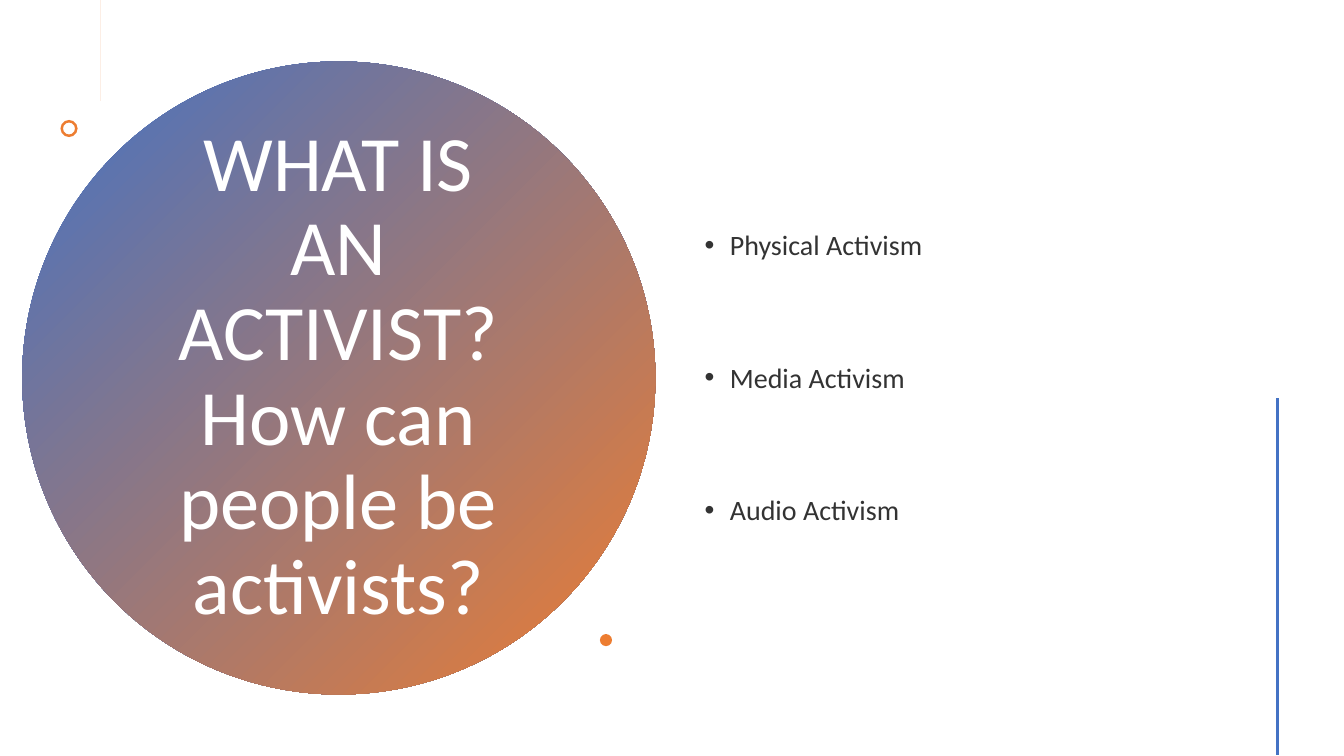
from dataclasses import dataclass
from math import cos, pi, sin

from lxml.etree import SubElement
from pptx import Presentation
from pptx.dml.color import RGBColor
from pptx.enum.shapes import MSO_CONNECTOR, MSO_SHAPE
from pptx.enum.text import MSO_ANCHOR, MSO_AUTO_SIZE, PP_ALIGN
from pptx.oxml.ns import qn
from pptx.util import Inches, Pt


@dataclass(frozen=True)
class Theme:
    font: str = "Calibri"
    title_size: int = 56
    body_size: int = 20
    blue: RGBColor = RGBColor(0x44, 0x72, 0xC4)
    orange: RGBColor = RGBColor(0xED, 0x7D, 0x31)
    white: RGBColor = RGBColor(0xFF, 0xFF, 0xFF)
    ink: RGBColor = RGBColor(0x33, 0x33, 0x33)


THEME = Theme()


def write(p, text, *, size, color, align=PP_ALIGN.LEFT, before=0):
    p.alignment = align
    p.line_spacing = 0.9
    p.space_before = Pt(before)
    for i, line in enumerate(text.split("\n")):
        if i:
            p.add_line_break()
        r = p.add_run()
        r.text = line
        r.font.name = THEME.font
        r.font.size = Pt(size)
        r.font.color.rgb = color


def prepare(tf, inset):
    tf.word_wrap = True
    tf.auto_size = MSO_AUTO_SIZE.NONE
    tf.vertical_anchor = MSO_ANCHOR.MIDDLE
    tf.margin_left = tf.margin_right = Inches(inset)


def add_bullet(p):
    pPr = p._p.get_or_add_pPr()
    pPr.set("marL", str(Inches(0.25)))
    pPr.set("indent", str(-Inches(0.25)))
    SubElement(pPr, qn("a:buFont")).set("typeface", "Arial")
    SubElement(pPr, qn("a:buChar")).set("char", "•")


def paint(sp, color):
    sp.shadow.inherit = False
    sp.line.fill.background()
    sp.fill.solid()
    sp.fill.fore_color.rgb = color


def add_preset(s, kind, x, y, size):
    sp = s.shapes.add_shape(kind, Inches(x), Inches(y), Inches(size), Inches(size))
    paint(sp, THEME.orange)
    return sp


def add_plus(s, x, y, size):
    half, r = size / 2, 0.013
    points = []
    for arm in range(4):
        turn = arm * pi / 2
        for step in range(9):
            a = -pi / 2 + step * pi / 8
            px, py = half - r + r * cos(a), r * sin(a)
            points.append((x + half + px * cos(turn) - py * sin(turn),
                           y + half + px * sin(turn) + py * cos(turn)))
        points.append((x + half + r * (cos(turn) - sin(turn)),
                       y + half + r * (sin(turn) + cos(turn))))
    fb = s.shapes.build_freeform(*points[0], scale=Inches(1))
    fb.add_line_segments(points[1:], close=True)
    paint(fb.convert_to_shape(), THEME.orange)


def title_circle(s, x, y, size):
    circle = add_preset(s, MSO_SHAPE.OVAL, x, y, size)
    circle.fill.gradient()
    circle.fill.gradient_angle = 315
    for stop, color in zip(circle.fill.gradient_stops, (THEME.blue, THEME.orange)):
        stop.color.rgb = color
    title = s.shapes.title
    s.shapes._spTree.append(title._element)
    title.left, title.top = Inches(x + 1.14), Inches(y + 0.8)
    title.width, title.height = Inches(3.99), Inches(4.67)
    prepare(title.text_frame, 0.15)
    write(title.text_frame.paragraphs[0],
          "WHAT IS AN ACTIVIST?\nHow can people be activists?",
          size=THEME.title_size, color=THEME.white, align=PP_ALIGN.CENTER)
    add_plus(s, x + 1.01, y - 0.2, 0.19)
    ring = add_preset(s, MSO_SHAPE.DONUT, x + 0.38, y + 0.58, 0.17)
    ring.adjustments[0] = 0.15
    add_preset(s, MSO_SHAPE.OVAL, x + 5.73, y + 5.68, 0.12)


def bullet_list(s, x, y, w, h, items):
    box = s.shapes.add_textbox(Inches(x), Inches(y), Inches(w), Inches(h))
    tf = box.text_frame
    prepare(tf, 0.1)
    for i, item in enumerate(items):
        p = tf.add_paragraph() if i else tf.paragraphs[0]
        write(p, item, size=THEME.body_size, color=THEME.ink, before=73 if i else 0)
        add_bullet(p)


def side_rule(s, x, y, h):
    line = s.shapes.add_connector(MSO_CONNECTOR.STRAIGHT,
                                  Inches(x), Inches(y), Inches(x), Inches(y + h))
    line.line.color.rgb = THEME.blue
    line.line.width = Pt(2)
    SubElement(line._element.spPr, qn("a:effectLst"))


def main():
    prs = Presentation()
    prs.slide_width, prs.slide_height = Inches(13.33), Inches(7.5)
    s = prs.slides.add_slide(prs.slide_layouts[5])
    title_circle(s, 0.22, 0.61, 6.28)
    bullet_list(s, 6.89, 0.57, 5.22, 6.38,
                ["Physical Activism", "Media Activism", "Audio Activism"])
    side_rule(s, 12.67, 3.95, 3.54)
    prs.save("out.pptx")


if __name__ == "__main__":
    main()
